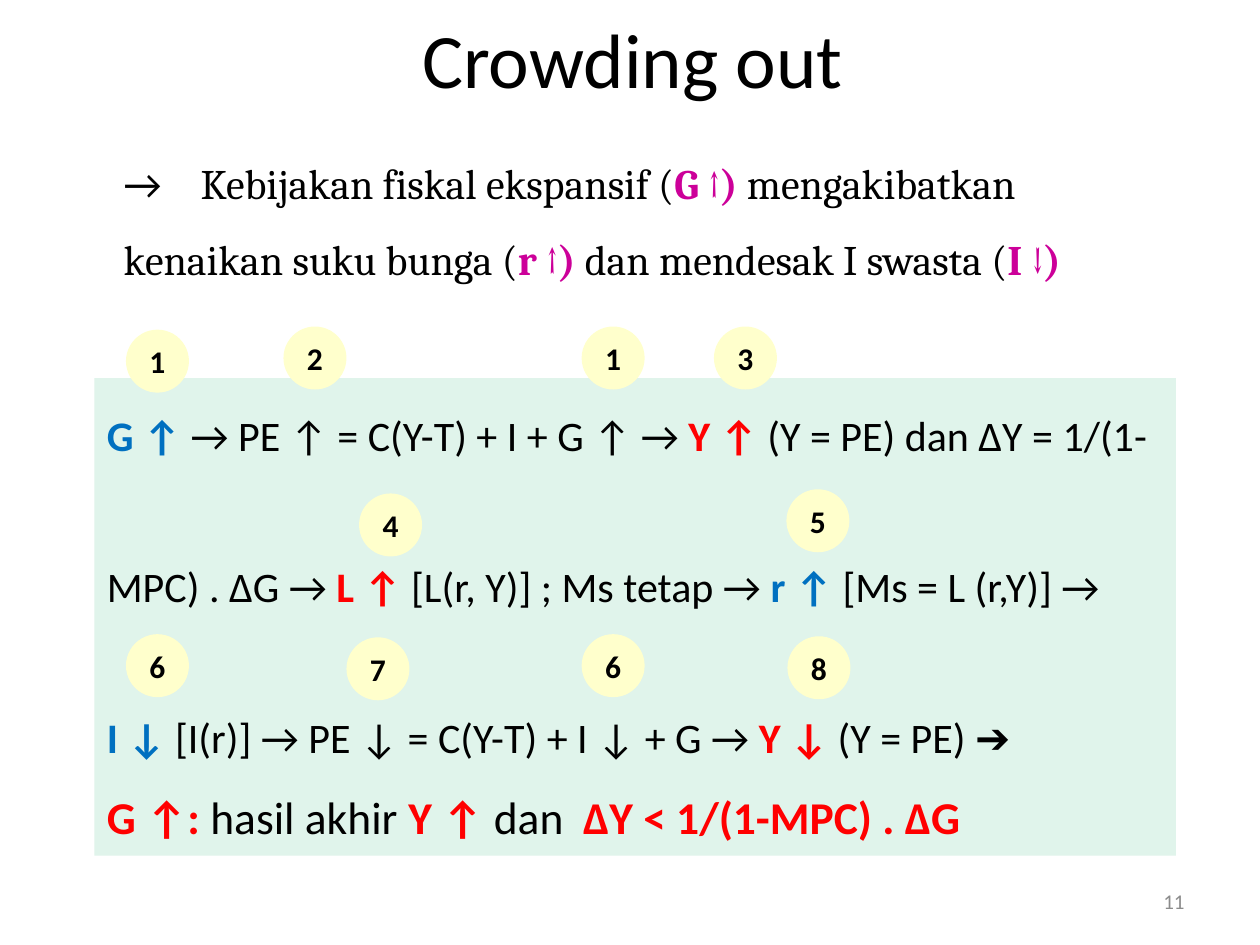
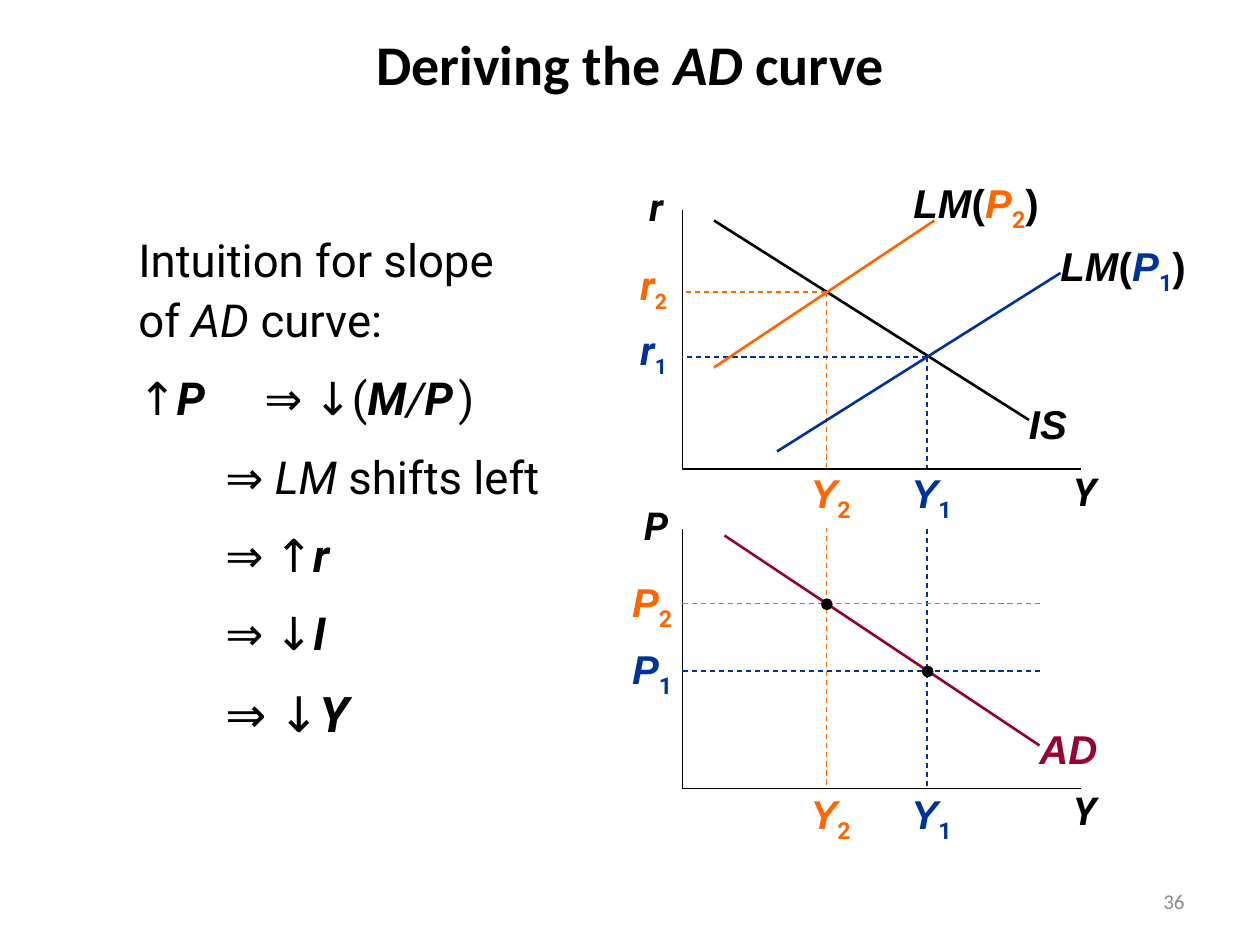
from lxml import etree
from pptx import Presentation
from pptx.dml.color import RGBColor
from pptx.enum.dml import MSO_LINE
from pptx.enum.shapes import MSO_CONNECTOR, MSO_SHAPE
from pptx.enum.text import MSO_ANCHOR, MSO_AUTO_SIZE, PP_ALIGN
from pptx.oxml.ns import qn
from pptx.util import Inches, Pt

BLACK = RGBColor(0x00, 0x00, 0x00)
WHITE = RGBColor(0xFF, 0xFF, 0xFF)
GREY = RGBColor(0x8C, 0x8C, 0x8C)
MINT = RGBColor(0xE0, 0xF4, 0xEB)
CREAM = RGBColor(0xFF, 0xFF, 0xCC)
SKY = RGBColor(0x00, 0x70, 0xC0)
RED = RGBColor(0xFF, 0x00, 0x00)
PINK = RGBColor(0xCC, 0x00, 0x99)
NAVY = RGBColor(0x00, 0x33, 0x99)
AMBER = RGBColor(0xFF, 0x66, 0x00)
WINE = RGBColor(0x99, 0x00, 0x33)

LEFT, CENTER, RIGHT = PP_ALIGN.LEFT, PP_ALIGN.CENTER, PP_ALIGN.RIGHT
TOP, MIDDLE = MSO_ANCHOR.TOP, MSO_ANCHOR.MIDDLE
FIXED = MSO_AUTO_SIZE.NONE
RECT, OVAL = MSO_SHAPE.RECTANGLE, MSO_SHAPE.OVAL
STRAIGHT, DASH = MSO_CONNECTOR.STRAIGHT, MSO_LINE.DASH

WIDTH, HEIGHT = Inches(10), Inches(7.5)
CELL = WIDTH // 120
INSET = (Inches(0.1), Inches(0.05))

UP = {"ink": RED, "bold": True}
COOL = {"ink": SKY, "bold": True}
HOT = {"ink": PINK, "bold": True, "face": "Cambria"}
BOOK = {"face": "Cambria"}
SLANT = {"italic": True}
STRONG = {"bold": True, "italic": True}
PLAIN = {}


def cells(*sizes):
    return [round(size * CELL) for size in sizes]


def dress(font, size, face="Calibri", ink=BLACK, bold=False, italic=False):
    font.size = Pt(size)
    font.name = face
    font.color.rgb = ink
    font.bold = bold
    font.italic = italic


def write(par, runs, look, align=LEFT, pitch=None, before=0, tab=None):
    if tab:
        stops = etree.SubElement(par._p.get_or_add_pPr(), qn("a:tabLst"))
        etree.SubElement(stops, qn("a:tab"), pos=str(Inches(tab)), algn="l")
    par.alignment = align
    par.space_before = Pt(before)
    if pitch:
        par.line_spacing = pitch
    dress(par.font, **look)
    for text, change in runs:
        if text == "\n":
            par.add_line_break()
            continue
        style = {**look, **change}
        sub = style.pop("sub", False)
        run = par.add_run()
        run.text = text
        dress(run.font, **style)
        if sub:
            run._r.get_or_add_rPr().set("baseline", "-25000")


def frame(shape, anchor=TOP, inset=INSET, wrap=True):
    text = shape.text_frame
    text.word_wrap = wrap
    text.auto_size = FIXED
    text.vertical_anchor = anchor
    text.margin_left = text.margin_right = inset[0]
    text.margin_top = text.margin_bottom = inset[1]
    return text


def solid(slide, kind, box, fill):
    shape = slide.shapes.add_shape(kind, *cells(*box))
    shape.shadow.inherit = False
    shape.fill.solid()
    shape.fill.fore_color.rgb = fill
    shape.line.fill.background()
    return shape


def stroke(slide, box, start, end, ink, width=1.0, dash=False):
    x, y = box[:2]
    ends = cells(x + start[0], y + start[1], x + end[0], y + end[1])
    line = slide.shapes.add_connector(STRAIGHT, *ends)
    line.line.color.rgb = ink
    line.line.width = Pt(width)
    if dash:
        line.line.dash_style = DASH
    etree.SubElement(line._element.spPr, qn("a:effectLst"))


def title(slide, box, runs, look):
    head = slide.shapes.title
    head.left, head.top, head.width, head.height = cells(*box)
    write(frame(head, MIDDLE).paragraphs[0], runs, look, CENTER)


def footer(slide, number):
    box = slide.shapes.add_textbox(*cells(86, 83.4, 28, 4.8))
    look = {"size": 12, "ink": GREY}
    write(frame(box, MIDDLE).paragraphs[0], [(number, PLAIN)], look, RIGHT)


def fill(text, rows, pitch):
    for index, (runs, look, rest) in enumerate(rows):
        par = text.add_paragraph() if index else text.paragraphs[0]
        write(par, runs, look, pitch=pitch, **rest)


def intro(slide, box):
    text = frame(slide.shapes.add_textbox(*cells(*box)))
    runs = [
        ("→\t", PLAIN),
        ("Kebijakan fiskal ekspansif (", BOOK),
        ("G ↑) ", HOT),
        ("mengakibatkan kenaikan suku bunga (", BOOK),
        ("r ↑) ", HOT),
        ("dan mendesak I swasta (", BOOK),
        ("I ↓)", HOT),
    ]
    write(text.paragraphs[0], runs, {"size": 24}, pitch=1.5, tab=0.61)


def chain(slide, box):
    text = frame(solid(slide, RECT, box, MINT))
    body, gap = {"size": 24}, {"before": 43}
    rows = [
        ([("G ↑ ", COOL), ("→ PE ↑ = C(Y-T) + I + G ↑ → ", PLAIN),
          ("Y ↑", UP), (" (Y = PE) dan ∆Y = 1/(1-", PLAIN)], body, {}),
        ([("MPC) . ∆G → ", PLAIN), ("L ↑ ", UP),
          ("[L(r, Y)] ; Ms tetap → ", PLAIN), ("r ↑ ", COOL),
          ("[Ms = L (r,Y)] →", PLAIN)], body, gap),
        ([("I ↓ ", COOL), ("[I(r)] → PE ↓ = C(Y-T) + I ↓ + G → ", PLAIN),
          ("Y ↓ ", UP), ("(Y = PE) ➔", PLAIN)], body, gap),
        ([("G ↑: ", UP), ("hasil akhir ", PLAIN), ("Y ↑", UP),
          (" dan\t", PLAIN), ("∆Y < 1/(1-MPC) . ∆G", UP)],
         {"size": 26}, {"tab": 3.78}),
    ]
    fill(text, rows, 1.5)
    badges = [
        ("1", 3, -4.6), ("2", 18, -4.9), ("1", 46.4, -4.9), ("3", 59, -4.9),
        ("4", 25.2, 11), ("5", 65.9, 10.6),
        ("6", 3, 24.4), ("7", 24, 24.7), ("6", 46.4, 24.4), ("8", 66, 24.6),
    ]
    for digit, x, y in badges:
        disc = solid(slide, OVAL, (box[0] + x, box[1] + y, 6, 6), CREAM)
        par = frame(disc, MIDDLE, (0, 0), False).paragraphs[0]
        write(par, [(digit, PLAIN)], {"size": 18, "bold": True}, CENTER)


def reason(slide, box):
    text = frame(slide.shapes.add_textbox(*cells(*box)))
    look = {"size": 26, "face": "Roboto"}
    large = {**look, "size": 28}
    step = {"before": 10.4, "tab": 0.69}
    rows = [
        ([("Intuition for slope", PLAIN), ("\n", PLAIN), ("of ", PLAIN),
          ("AD ", SLANT), ("curve:", PLAIN)], look, {"before": 2}),
        ([("↑", PLAIN), ("P", STRONG), ("\t⇒ ↓(", PLAIN), ("M", STRONG),
          ("/", SLANT), ("P", STRONG), (" ", {"size": 12}), (")", PLAIN)],
         look, {"before": 10.4, "tab": 1.0}),
        ([("\t⇒ ", PLAIN), ("LM ", SLANT), ("shifts left", PLAIN)], look, step),
        ([("\t⇒ ↑", PLAIN), ("r", STRONG)], look, step),
        ([("\t⇒ ↓", PLAIN), ("I", STRONG)], look, step),
        ([("\t⇒ ↓", PLAIN), ("Y", STRONG)], large, step),
    ]
    fill(text, rows, 1.1)


def label(slide, box, spot, runs, ink=BLACK, size=23, face="Arial",
          wide=5, align=LEFT, cover=False):
    place = (box[0] + spot[0], box[1] + spot[1], wide, 5.7)
    if cover:
        shape = solid(slide, RECT, place, WHITE)
    else:
        shape = slide.shapes.add_textbox(*cells(*place))
    look = {"size": size, "face": face, "ink": ink, **STRONG}
    par = frame(shape, TOP, (0, 0), False).paragraphs[0]
    write(par, runs, look, align, before=2)


def mark(name, digit, size=23):
    low = {"face": "Roboto", "italic": False, "sub": True, "size": size}
    return [(name, PLAIN), (digit, low)]


def axes(slide, box, name):
    wide, high = box[2:]
    stroke(slide, box, (0, 0), (0, high), BLACK)
    stroke(slide, box, (0, high), (wide, high), BLACK)
    look = {"size": 22, "face": "Roboto"}
    label(slide, box, (37.2, 24.6), [("Y", PLAIN)], **look)
    label(slide, box, (-5, -2.6), [(name, PLAIN)], align=CENTER, **look)


def market(slide, box, cases):
    axes(slide, box, "r")
    stroke(slide, box, (3, 1), (33, 20), BLACK, 1.5)
    label(slide, box, (33, 18), [("IS", PLAIN)])
    curves = [((9, 23), (36, 6), (36, 3), 14), ((3, 15), (24, 1), (22, -3), 7.8)]
    for (digit, ink, x), (start, end, spot, level) in zip(cases, curves):
        stroke(slide, box, start, end, ink, 1.5)
        sign = [(text, {**style, "ink": ink}) for text, style in mark("P", digit)]
        flat = {"italic": False}
        runs = [("LM", PLAIN), ("(", flat), *sign, (")", flat)]
        label(slide, box, spot, runs, wide=13)
        stroke(slide, box, (x, level), (0, level), ink, 0.75, True)
        label(slide, box, (-4, level - 3), mark("r", digit, 21), ink, face="Roboto")


def demand(slide, box, cases):
    axes(slide, box, "P")
    stroke(slide, box, (4, 0.6), (34, 20.6), WINE, 1.5)
    label(slide, box, (34, 18.6), [("AD", PLAIN)], WINE)
    for (digit, ink, x), level in zip(cases, (13.5, 7.1)):
        stroke(slide, box, (0, level), (34, level), ink, 0.75, True)
        label(slide, box, (-4.8, level - 2.5), mark("P", digit), ink)
        label(slide, box, (x - 1.5, 24.8), mark("Y", digit), ink)
        solid(slide, OVAL, (box[0] + x - 0.5, box[1] + level - 0.5, 1.1, 1.1), BLACK)


def graphs(slide, box):
    x, y, wide, high = box
    cases = [("1", NAVY, 23.3), ("2", AMBER, 13.7)]
    for (digit, ink, across), start in zip(cases, (14, 7.8)):
        stroke(slide, box, (across, start), (across, high), ink, 0.75, True)
        label(slide, box, (across - 1.5, 24.6), mark("Y", digit), ink, cover=True)
    market(slide, (x, y, wide, 24.7), cases)
    demand(slide, (x, y + high - 24.7, wide, 24.7), cases)


def main():
    deck = Presentation()
    deck.slide_width, deck.slide_height = WIDTH, HEIGHT
    layout = deck.slide_layouts[5]

    crowd = deck.slides.add_slide(layout)
    title(crowd, (0.5, 0, 119.5, 11), [("Crowding out", PLAIN)], {"size": 44})
    intro(crowd, (10.6, 12, 100, 15.7))
    chain(crowd, (9, 36, 103, 45.5))
    footer(crowd, "11")

    curve = deck.slides.add_slide(layout)
    runs = [("Deriving the ", PLAIN), ("AD", SLANT), (" curve", PLAIN)]
    title(curve, (6, 0, 108, 12), runs, {"size": 32, "bold": True})
    graphs(curve, (65, 20, 38, 55.1))
    reason(curve, (12, 21, 43, 53))
    footer(curve, "36")

    deck.save("out.pptx")


if __name__ == "__main__":
    main()
